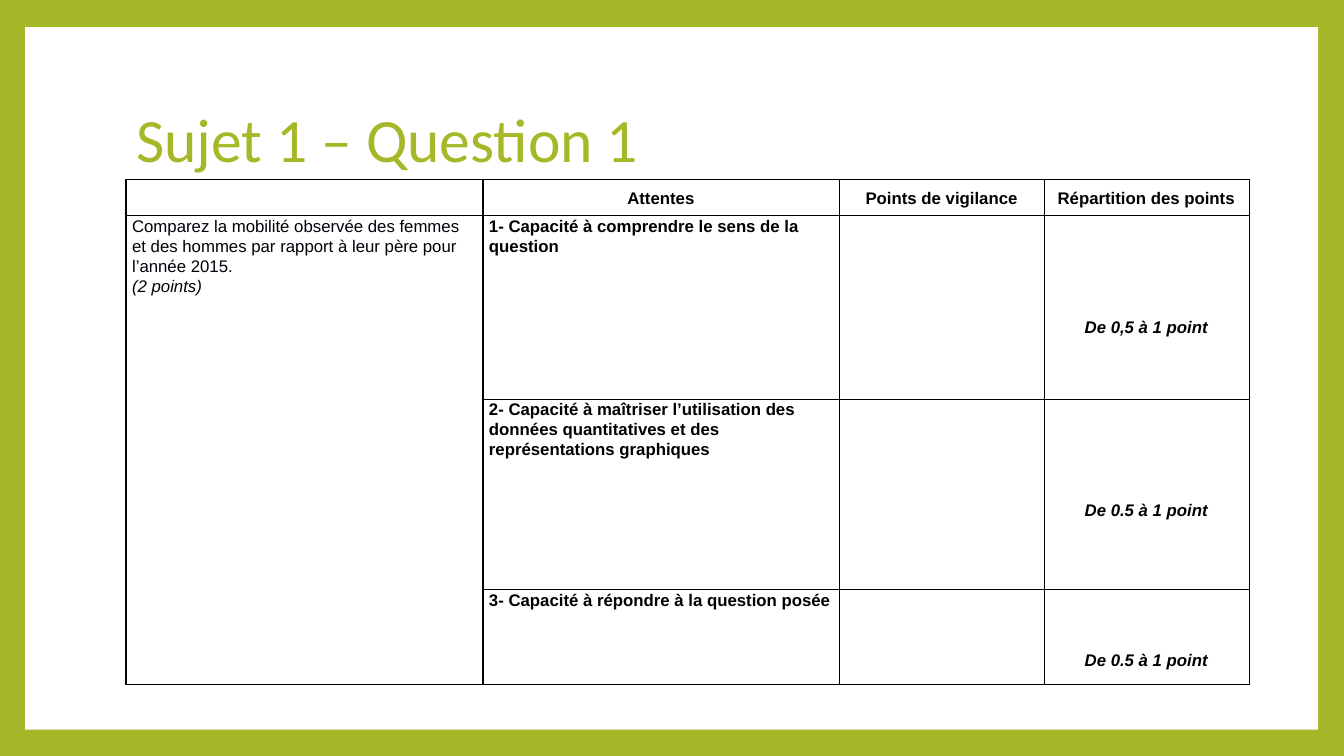
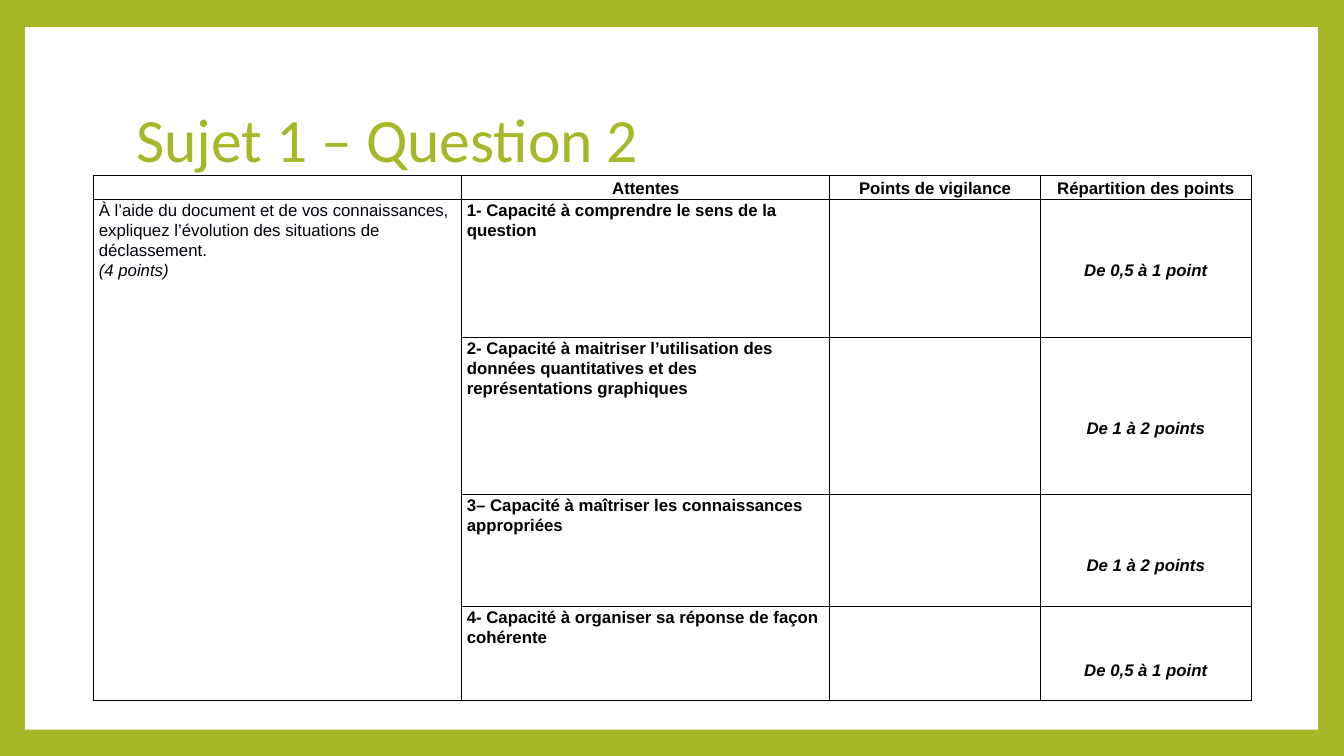
from lxml import etree
from pptx import Presentation
from pptx.dml.color import RGBColor
from pptx.enum.shapes import MSO_SHAPE
from pptx.enum.text import MSO_ANCHOR, MSO_AUTO_SIZE, PP_ALIGN
from pptx.oxml.ns import qn
from pptx.util import Inches, Pt

LEFT, CENTER = PP_ALIGN.LEFT, PP_ALIGN.CENTER
TOP, MIDDLE = MSO_ANCHOR.TOP, MSO_ANCHOR.MIDDLE
RECTANGLE = MSO_SHAPE.RECTANGLE
NO_AUTOFIT = MSO_AUTO_SIZE.NONE
GREEN, WHITE, BLACK, INK = "A6B727", "FFFFFF", "000000", "00000A"
LINE_STEP = 0.2
TITLE_ONLY = 5
HEADERS = ["Attentes", "Points de vigilance", "Répartition des points"]

SLIDES = [
    {
        "title": "Sujet 1 – Question 1",
        "origin": (1.25, 1.78),
        "cols": [3.54, 3.54, 2.03, 2.03],
        "rows": [0.36, 1.82, 1.89, 0.94],
        "insets": (0.06, 0.07),
        "question": "Comparez la mobilité observée des femmes et des hommes "
                    "par rapport à leur père pour l’année 2015.",
        "total": "(2 points)",
        "criteria": [
            ("1- Capacité à comprendre le sens de la question",
             "De 0,5 à 1 point", 5),
            ("2- Capacité à maîtriser l’utilisation des données quantitatives "
             "et des représentations graphiques", "De 0.5 à 1 point", 5),
            ("3- Capacité à répondre à la question posée",
             "De 0.5 à 1 point", 3),
        ],
    },
    {
        "title": "Sujet 1 – Question 2",
        "origin": (0.93, 1.74),
        "cols": [3.65, 3.65, 2.09, 2.09],
        "rows": [0.24, 1.37, 1.56, 1.11, 0.93],
        "insets": (0.05, 0.05),
        "question": "À l’aide du document et de vos connaissances, expliquez "
                    "l’évolution des situations de déclassement.",
        "total": "(4 points)",
        "criteria": [
            ("1- Capacité à comprendre le sens de la question",
             "De 0,5 à 1 point", 3),
            ("2- Capacité à maitriser l’utilisation des données quantitatives "
             "et des représentations graphiques", "De 1 à 2 points", 4),
            ("3– Capacité à maîtriser les connaissances appropriées",
             "De 1 à 2 points", 3),
            ("4- Capacité à organiser sa réponse de façon cohérente",
             "De 0,5 à 1 point", 2.65),
        ],
    },
]


def rgb(value):
    """Turn a hex string into a colour."""
    return RGBColor.from_string(value)


def place(sp, left, top, width, height):
    """Set a shape's box in inches."""
    sp.left, sp.top = Inches(left), Inches(top)
    sp.width, sp.height = Inches(width), Inches(height)


def add_text(tf, text, size=12, font="Arial", color=BLACK, bold=False,
             italic=False, align=LEFT, spacing=1.07):
    """Write a formatted paragraph, filling the first one if it is empty."""
    p = tf.paragraphs[0] if not tf.text else tf.add_paragraph()
    p.alignment, p.line_spacing = align, spacing
    r = p.add_run()
    r.text = text
    r.font.size, r.font.name = Pt(size), font
    r.font.bold, r.font.italic = bold, italic
    r.font.color.rgb = rgb(color)


def style_master(prs):
    """Give every slide the green border, white panel and title position."""
    master, layout = prs.slide_master, prs.slide_layouts[TITLE_ONLY]
    master.background.fill.solid()
    master.background.fill.fore_color.rgb = rgb(GREEN)
    place(layout.placeholders[0], 1.25, 0.67, 10.8, 1.48)
    return layout


def add_panel(master, slide):
    """Draw the white panel and move it behind everything on the master."""
    sp = slide.shapes.add_shape(RECTANGLE, 0, 0, 0, 0)
    place(sp, 0.25, 0.27, 12.82, 6.97)
    sp.shadow.inherit = False
    sp.fill.solid()
    sp.fill.fore_color.rgb = rgb(WHITE)
    sp.line.fill.background()
    master.shapes._spTree.insert(2, sp._element)


def add_title(slide, text):
    """Fill the title placeholder."""
    tf = slide.shapes.title.text_frame
    tf.auto_size, tf.vertical_anchor = NO_AUTOFIT, MIDDLE
    add_text(tf, text, size=44, font="Calibri", color=GREEN, spacing=0.9)


def set_borders(cell, color=INK, width=1):
    """Draw the four borders of a cell."""
    tcPr = cell._tc.get_or_add_tcPr()
    for i, side in enumerate("LRTB"):
        ln = etree.Element(qn(f"a:ln{side}"), w=str(Pt(width)))
        fill = etree.SubElement(ln, qn("a:solidFill"))
        etree.SubElement(fill, qn("a:srgbClr"), val=color)
        tcPr.insert(i, ln)


def style_cell(cell, insets):
    """Set a cell's fill, insets, empty-text size and borders."""
    cell.fill.background()
    cell.margin_left, cell.margin_right = map(Inches, insets)
    cell.margin_top = cell.margin_bottom = 0
    cell.vertical_anchor = TOP
    if not cell.text_frame.text:
        p = cell.text_frame.paragraphs[0]
        etree.SubElement(p._p, qn("a:endParaRPr"), sz="1200")
    set_borders(cell)


def add_grid(slide, origin, cols, rows, insets):
    """Add a plain bordered table."""
    box = [Inches(v) for v in (*origin, sum(cols), sum(rows))]
    table = slide.shapes.add_table(len(rows), len(cols), *box).table
    table.first_row = table.horz_banding = False
    for col, width in zip(table.columns, cols):
        col.width = Inches(width)
    for row, height in zip(table.rows, rows):
        row.height = Inches(height)
    for cell in table.iter_cells():
        style_cell(cell, insets)
    return table


def add_marking_table(slide, spec_data):
    """Add the table of the question, its criteria and their points."""
    table = add_grid(slide, *(spec_data[key] for key in
                              ("origin", "cols", "rows", "insets")))
    for col, text in enumerate(HEADERS, 1):
        cell = table.cell(0, col)
        cell.vertical_anchor = MIDDLE
        add_text(cell.text_frame, text, bold=True, align=CENTER)

    question = table.cell(1, 0)
    question.merge(table.cell(len(spec_data["criteria"]), 0))
    add_text(question.text_frame, spec_data["question"], color=INK)
    add_text(question.text_frame, spec_data["total"], color=INK, italic=True)

    for row, (criterion, points, lines) in enumerate(spec_data["criteria"], 1):
        add_text(table.cell(row, 1).text_frame, criterion, bold=True)
        cell = table.cell(row, 3)
        cell.margin_top = Inches(lines * LINE_STEP)
        add_text(cell.text_frame, points, bold=True, italic=True, align=CENTER)


def main():
    """Build and save the presentation."""
    prs = Presentation()
    prs.slide_width, prs.slide_height = Inches(13.33), Inches(7.5)
    layout = style_master(prs)
    for number, content in enumerate(SLIDES):
        slide = prs.slides.add_slide(layout)
        if number == 0:
            add_panel(prs.slide_master, slide)
        add_title(slide, content["title"])
        add_marking_table(slide, content)
    prs.save("out.pptx")


if __name__ == "__main__":
    main()
